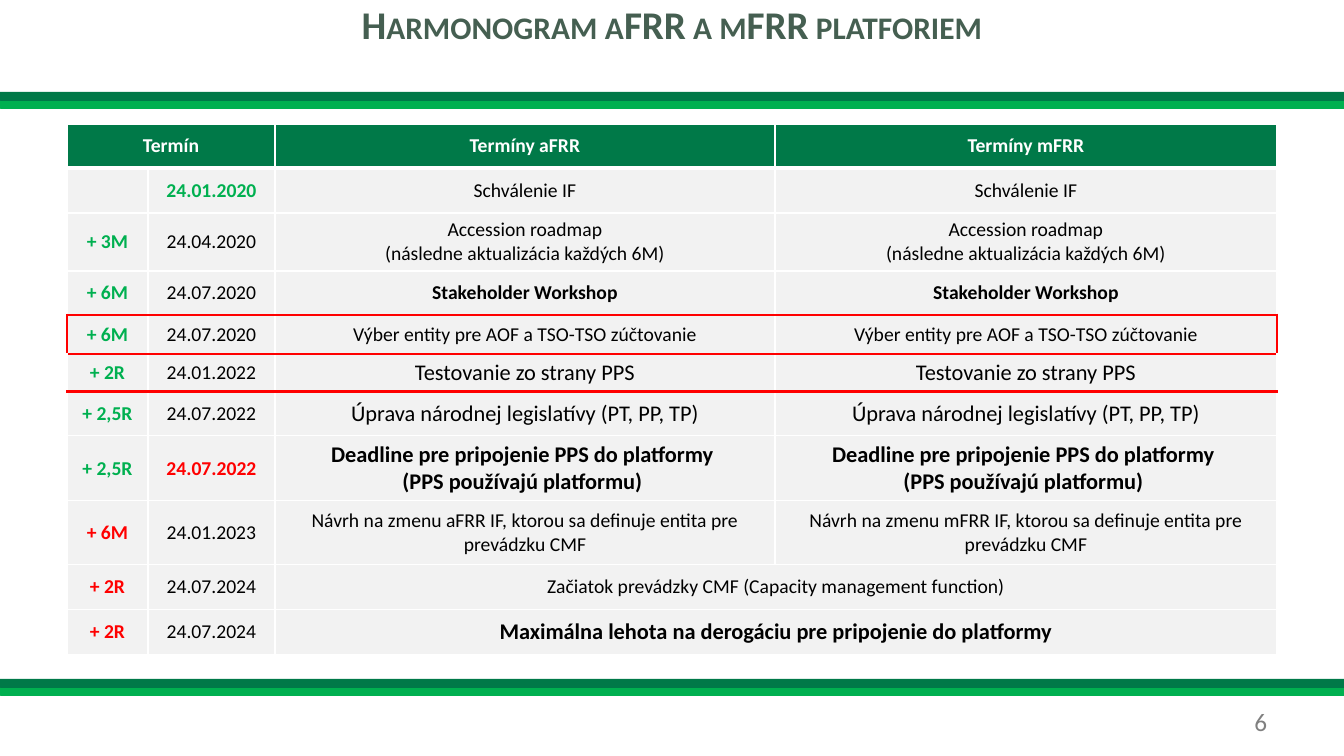
from dataclasses import dataclass

from lxml import etree
from pptx import Presentation
from pptx.dml.color import RGBColor
from pptx.enum import shapes, text
from pptx.oxml import parse_xml
from pptx.oxml.ns import nsdecls, qn
from pptx.util import Emu, Pt


@dataclass
class Theme:
    font: str = "Calibri"
    dark: str = "007948"
    green: str = "00B050"
    red: str = "FF0000"
    pale: str = "F2F2F2"
    white: str = "FFFFFF"
    black: str = "000000"
    slate: str = "455F51"
    gray: str = "808080"
    head: int = 28
    page: int = 18
    big: int = 16
    body: int = 14


T = Theme()
PX = 12192000 / 1344


def px(*nums):
    return [Emu(round(n * PX)) for n in nums]


def style(frame, size, color, bold=False, align=text.PP_ALIGN.CENTER):
    for para in frame.paragraphs:
        para.alignment = align
        for font in [para.font] + [run.font for run in para.runs]:
            font.name, font.size, font.bold = T.font, Pt(size), bold
            font.color.rgb = RGBColor.from_string(color)


deck = Presentation()
deck.slide_width, deck.slide_height = px(1344, 756)
slide = deck.slides.add_slide(deck.slide_layouts[5])

# Green bands above and below the table
for top in (92, 679):
    for drop, color in ((8, T.green), (0, T.dark)):
        band = slide.shapes.add_shape(
            shapes.MSO_SHAPE.RECTANGLE, *px(0, top + drop, 1344, 8))
        band.shadow.inherit = False
        band.fill.solid()
        band.fill.fore_color.rgb = RGBColor.from_string(color)
        band.line.color.rgb = RGBColor.from_string(color)
        band.line.width = Pt(0.25)

# Title in small caps with a soft shadow
title = slide.shapes.title
title.left, title.top, title.width, title.height = px(67, -5, 1210, 93)
frame = title.text_frame
frame.text = "Harmonogram aFRR a mFRR platforiem"
frame.vertical_anchor = text.MSO_ANCHOR.TOP
frame.auto_size = text.MSO_AUTO_SIZE.NONE
style(frame, T.head, T.slate, True)
props = frame.paragraphs[0].runs[0].font._element
props.set("cap", "small")
props.find(qn("a:solidFill")).addnext(parse_xml(
    f'<a:effectLst {nsdecls("a")}><a:outerShdw blurRad="38100" dist="38100" '
    'dir="2700000" algn="tl"><a:srgbClr val="000000"><a:alpha val="43000"/>'
    '</a:srgbClr></a:outerShdw></a:effectLst>'))

# Page number
page = slide.shapes.add_textbox(*px(964, 701, 313, 40)).text_frame
page.word_wrap = True
page.vertical_anchor = text.MSO_ANCHOR.MIDDLE
page.text = "6"
style(page, T.page, T.gray, align=text.PP_ALIGN.RIGHT)

# Rows: height, offset and its colour, date and its colour, event, size, bold
# {} stands for the platform letter of the column
rows = [
    (45, "", T.green, "24.01.2020", T.green, "Schválenie IF", T.body, False),
    (58, "+ 3M", T.green, "24.04.2020", T.black,
     "Accession roadmap\n(následne aktualizácia každých 6M)", T.body, False),
    (44, "+ 6M", T.green, "24.07.2020", T.black,
     "Stakeholder Workshop", T.body, True),
    (39, "+ 6M", T.green, "24.07.2020", T.black,
     "Výber entity pre AOF a TSO-TSO zúčtovanie", T.body, False),
    (38, "+ 2R", T.green, "24.01.2022", T.black,
     "Testovanie zo strany PPS", T.big, False),
    (44, "+ 2,5R", T.green, "24.07.2022", T.black,
     "Úprava národnej legislatívy (PT, PP, TP)", T.big, False),
    (65, "+ 2,5R", T.green, "24.07.2022", T.red,
     "Deadline pre pripojenie PPS do platformy \n(PPS používajú platformu) ",
     T.big, True),
    (64, "+ 6M", T.red, "24.01.2023", T.black,
     "Návrh na zmenu {}FRR IF, ktorou sa definuje entita pre prevádzku CMF",
     T.body, False),
    (45, "+ 2R", T.red, "24.07.2024", T.black,
     "Začiatok prevádzky CMF (Capacity management function)", T.body, False),
    (45, "+ 2R", T.red, "24.07.2024", T.black,
     "Maximálna lehota na derogáciu pre pripojenie do platformy", T.big, True),
]
wide = (9, 10)  # events shared by both platforms
cols = (81, 127, 500, 502)
highs = [44] + [row[0] for row in rows]

# Table grid
grid = slide.shapes.add_table(
    len(highs), len(cols), *px(67, 124, sum(cols), sum(highs))).table
grid.horz_banding = False
for col, width in zip(grid.columns, px(*cols)):
    col.width = width
for line, high in zip(grid.rows, px(*highs)):
    line.height = high

# Borders first, then fills: red rules frame row 4 and close row 5
for r in range(len(highs)):
    for c in range(len(cols)):
        cell = grid.cell(r, c)
        tag = cell._tc.get_or_add_tcPr()
        edges = (("lnL", r == 4 and c == 0, 1),
                 ("lnR", r == 4 and c == 3, 1),
                 ("lnT", r in (4, 5, 6), 3 if r == 1 else 1),
                 ("lnB", r in (3, 4, 5), 3 if r == 0 else 1))
        for name, hot, width in edges:
            edge = etree.SubElement(
                tag, qn("a:" + name), w=str(Pt(2.25 if hot else width)))
            fill = etree.SubElement(edge, qn("a:solidFill"))
            etree.SubElement(
                fill, qn("a:srgbClr"), val=T.red if hot else T.white)
        cell.fill.solid()
        cell.fill.fore_color.rgb = RGBColor.from_string(
            T.pale if r else T.dark)
        cell.vertical_anchor = text.MSO_ANCHOR.MIDDLE

# Merged cells
grid.cell(0, 0).merge(grid.cell(0, 1))
for r in wide:
    grid.cell(r, 2).merge(grid.cell(r, 3))

# Cell texts
items = [(0, c, word, T.body, T.white, True) for c, word in
         ((0, "Termín"), (2, "Termíny aFRR"), (3, "Termíny mFRR"))]
for r, (_, term, hue, date, tint, event, size, bold) in enumerate(rows, 1):
    items.append((r, 0, term, T.body, hue, True))
    items.append((r, 1, date, T.body, tint, tint != T.black))
    for c, kind in ((2, "a"), (3, "m")):
        if c == 2 or r not in wide:
            items.append((r, c, event.format(kind), size, T.black, bold))
for r, c, words, size, color, bold in items:
    frame = grid.cell(r, c).text_frame
    frame.text = words
    style(frame, size, color, bold)

deck.save("out.pptx")
